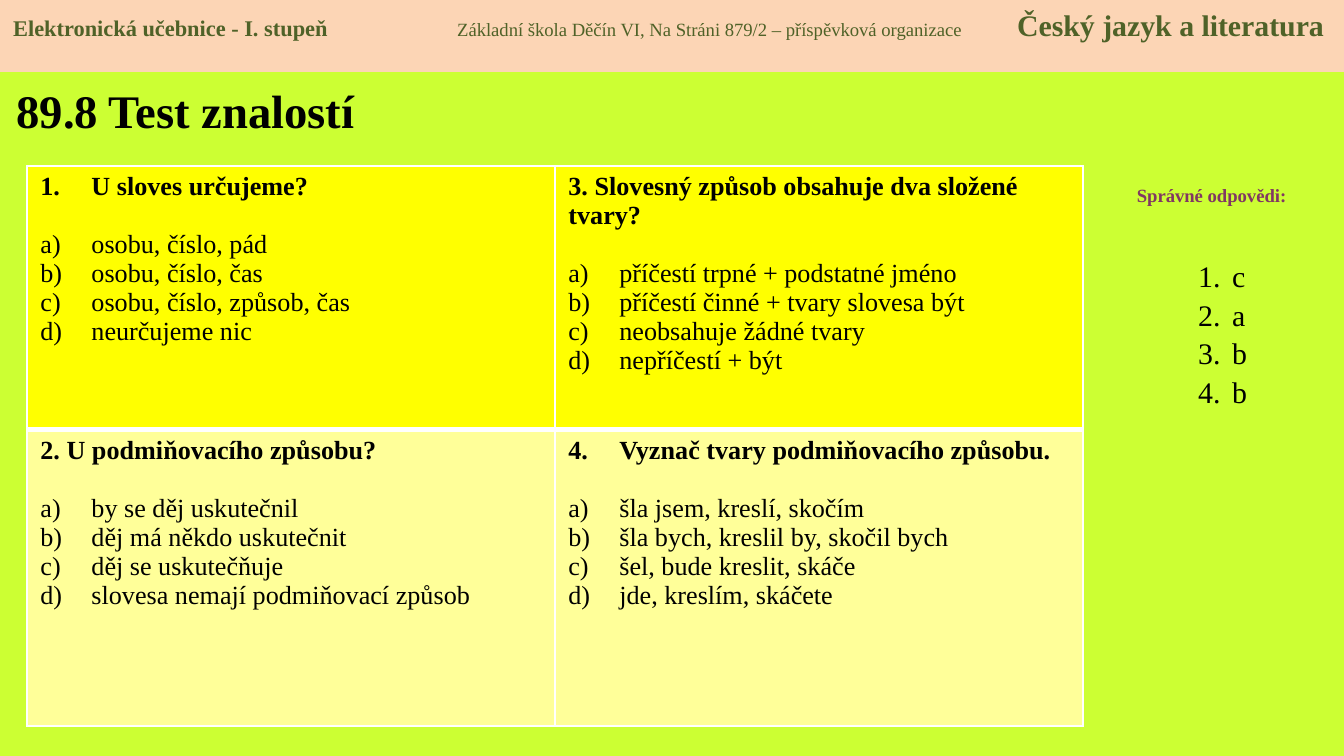
from pptx import Presentation
from pptx import util as u
from pptx.dml.color import RGBColor
from pptx.enum import shapes, text
from pptx.oxml.ns import qn
from lxml import etree

SCALE = 914400 / 134.4  # EMU in one px
BLACK, WHITE, GREEN, PURPLE = "000000", "FFFFFF", "4F6228", "813763"
LIME, PEACH, YELLOW, PALE = "CCFF33", "FCD5B5", "FFFF00", "FFFF99"

# (question, typed or automatic number, answers), row by row
QUESTIONS = [
    [("U sloves určujeme?", 1,
      ["osobu, číslo, pád", "osobu, číslo, čas",
       "osobu, číslo, způsob, čas", "neurčujeme nic"]),
     ("3. Slovesný způsob obsahuje dva složené tvary?", None,
      ["příčestí trpné + podstatné jméno", "příčestí činné + tvary slovesa být",
       "neobsahuje žádné tvary", "nepříčestí + být"])],
    [("2. U podmiňovacího způsobu?", None,
      ["by se děj uskutečnil", "děj má někdo uskutečnit",
       "děj se uskutečňuje", "slovesa nemají podmiňovací způsob"]),
     ("Vyznač tvary podmiňovacího způsobu.", 4,
      ["šla jsem, kreslí, skočím", "šla bych, kreslil by, skočil bych",
       "šel, bude kreslit, skáče", "jde, kreslím, skáčete"])],
]


def px(length):
    return u.Emu(round(length * SCALE))


def color(hex_value):
    return RGBColor.from_string(hex_value)


def add_text(paragraph, content, size=14, bold=False, fill=BLACK):
    run = paragraph.add_run()
    run.text = content
    font = run.font
    font.name, font.size, font.bold = "Times New Roman", u.Pt(size), bold
    font.color.rgb = color(fill)


def next_paragraph(frame):
    first = frame.paragraphs[0]
    return frame.add_paragraph() if first.runs else first


def number(paragraph, scheme, indent, start=1):
    properties = paragraph._p.get_or_add_pPr()
    properties.set("marL", str(px(indent)))
    properties.set("indent", str(-px(indent)))
    bullet = etree.SubElement(properties, qn("a:buAutoNum"), type=scheme)
    if start > 1:
        bullet.set("startAt", str(start))


def set_tabs(paragraph, positions):
    tabs = etree.SubElement(paragraph._p.get_or_add_pPr(), qn("a:tabLst"))
    for position in positions:
        etree.SubElement(tabs, qn("a:tab"), pos=str(px(position)), algn="l")


def set_borders(cell, **widths):
    properties = cell._tc.get_or_add_tcPr()
    for side, width in widths.items():
        line = etree.SubElement(properties, qn(f"a:ln{side}"), w=str(u.Pt(width)))
        fill = etree.SubElement(line, qn("a:solidFill"))
        etree.SubElement(fill, qn("a:srgbClr"), val=WHITE)


class TestSlide:
    def __init__(self, presentation):
        self.slide = presentation.slides.add_slide(presentation.slide_layouts[5])
        self.slide.background.fill.solid()
        self.slide.background.fill.fore_color.rgb = color(LIME)

    def frame(self, shape, top=7):
        frame = shape.text_frame
        frame.word_wrap = True
        frame.auto_size = text.MSO_AUTO_SIZE.NONE
        frame.vertical_anchor = text.MSO_ANCHOR.TOP
        frame.margin_top = px(top)
        return frame

    def title(self, content, left, top, width, height):
        shape = self.slide.shapes.title
        shape.left, shape.top, shape.width, shape.height = map(
            px, (left, top, width, height))
        paragraph = self.frame(shape, top=10).paragraphs[0]
        paragraph.alignment = text.PP_ALIGN.LEFT
        add_text(paragraph, content, size=25, bold=True)

    def band(self, parts, tabs, left, top, width, height):
        shape = self.slide.shapes.add_shape(
            shapes.MSO_SHAPE.RECTANGLE, *map(px, (left, top, width, height)))
        shape.shadow.inherit = False
        shape.fill.solid()
        shape.fill.fore_color.rgb = color(PEACH)
        shape.line.fill.background()
        paragraph = self.frame(shape).paragraphs[0]
        set_tabs(paragraph, tabs)
        paragraph.alignment = text.PP_ALIGN.LEFT
        for content, size, bold in parts:
            add_text(paragraph, content, size=size, bold=bold, fill=GREEN)

    def text_box(self, left, top, width, height, inset=7):
        return self.frame(self.slide.shapes.add_textbox(
            *map(px, (left, top, width, height))), top=inset)

    def label(self, content, *place):
        paragraph = self.text_box(*place).paragraphs[0]
        paragraph.alignment = text.PP_ALIGN.CENTER
        add_text(paragraph, content, size=10, bold=True, fill=PURPLE)

    def numbered_list(self, items, *place):
        frame = self.text_box(*place, inset=44)
        for index, item in enumerate(items):
            paragraph = next_paragraph(frame)
            number(paragraph, "arabicPeriod", 34)
            if index:
                paragraph.space_before = u.Pt(1.4)
            add_text(paragraph, item, size=16)

    def question(self, cell, heading, start, answers):
        paragraph = next_paragraph(cell.text_frame)
        if start:
            number(paragraph, "arabicPeriod", 51, start)
        add_text(paragraph, heading, bold=True)
        for index, answer in enumerate(answers):
            paragraph = next_paragraph(cell.text_frame)
            number(paragraph, "alphaLcParenR", 51)
            if index == 0:
                paragraph.space_before = u.Pt(15.5)
            add_text(paragraph, answer)

    def question_table(self, rows, fills, heights, left, top, width):
        table = self.slide.shapes.add_table(
            len(rows), len(rows[0]),
            *map(px, (left, top, width, sum(heights)))).table
        table.first_row = table.horz_banding = False
        for r, (row, fill, height) in enumerate(zip(rows, fills, heights)):
            table.rows[r].height = px(height)
            for c, question in enumerate(row):
                cell = table.cell(r, c)
                set_borders(cell, L=1, R=1, T=3 if r else 1, B=1 if r else 3)
                cell.fill.solid()
                cell.fill.fore_color.rgb = color(fill)
                self.question(cell, *question)


def main():
    presentation = Presentation()
    presentation.slide_width, presentation.slide_height = px(1344), px(756)
    page = TestSlide(presentation)

    # Heading and school band
    page.title("89.8 Test znalostí", 3, 72, 848, 127)
    page.band([("Elektronická učebnice - I. stupeň\t", 12, True),
               ("Základní škola Děčín VI, Na Stráni 879/2 – příspěvková organizace\t",
                10, False),
               ("Český jazyk a literatura", 16, True)],
              [444, 1004], 0, 0, 1344, 72)

    # Questions
    page.question_table(QUESTIONS, [YELLOW, PALE], [264, 296], 27, 166, 1056)

    # Correct answers
    page.label("Správné odpovědi:", 1106, 177, 211, 36)
    page.numbered_list(["c", "a", "b", "b"], 1185, 214, 74, 231)

    presentation.save("out.pptx")


if __name__ == "__main__":
    main()
